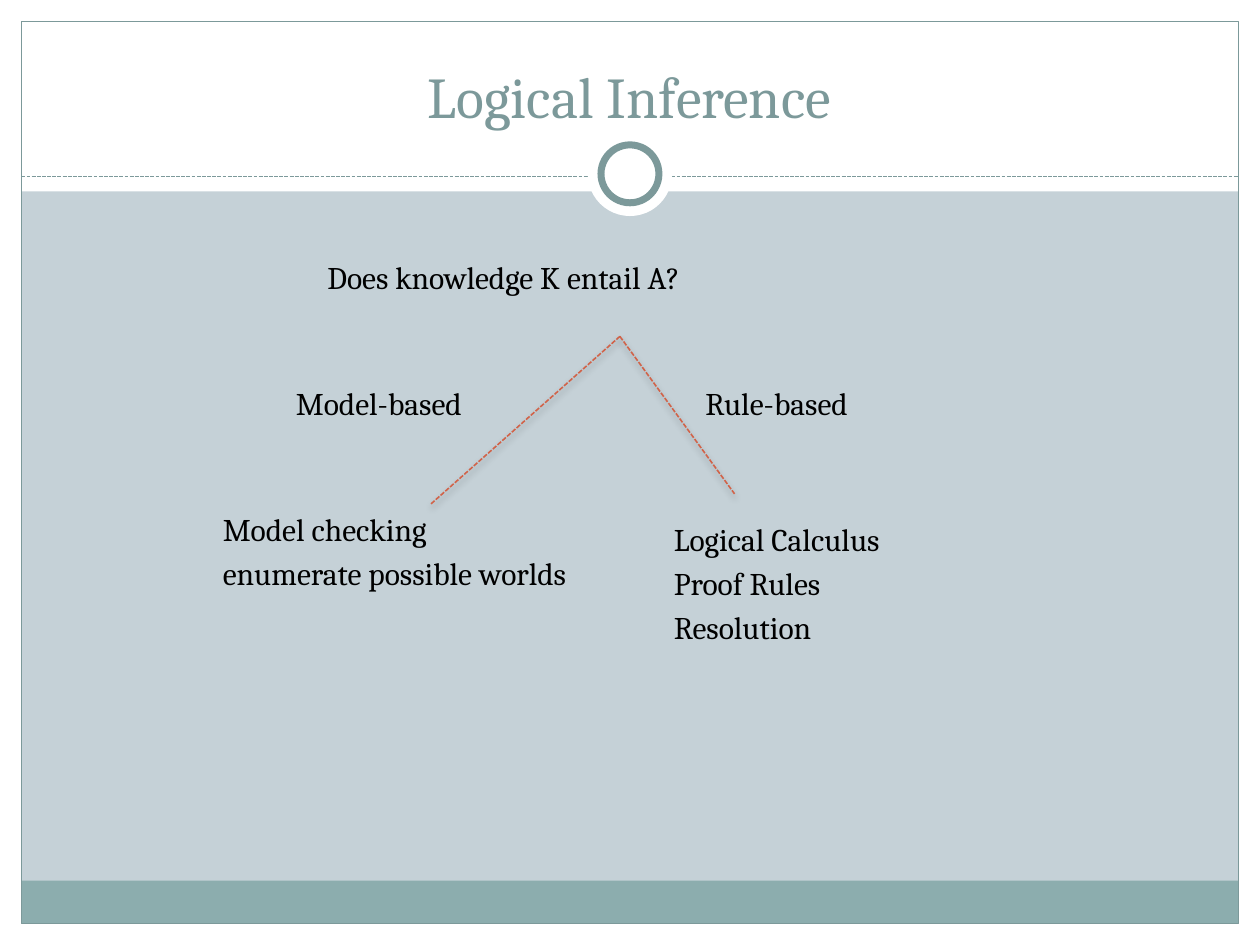
import pptx
import pptx.util
import pptx.dml.color
import pptx.enum.dml
import pptx.enum.shapes
import pptx.enum.text
import pptx.oxml
import pptx.oxml.ns

Inches, Pt = pptx.util.Inches, pptx.util.Pt
RGBColor = pptx.dml.color.RGBColor
SHAPE = pptx.enum.shapes.MSO_SHAPE
ANCHOR = pptx.enum.text.MSO_ANCHOR
ALIGN = pptx.enum.text.PP_ALIGN

# Content
TITLE = "Logical Inference"
NOTES = [  # left, top, width, height, lines
    (2.5, 2, 4.84, 0.67, ["Does knowledge K entail A?"]),
    (2.25, 3, 2.5, 0.75, ["Model-based"]),
    (1.67, 4, 3.5, 0.75, ["Model checking", "enumerate possible worlds"]),
    (5.5, 3, 1.75, 0.75, ["Rule-based"]),
    (5.25, 4.08, 2.33, 1.25, ["Logical Calculus", "Proof Rules", "Resolution"]),
]
BRANCH_TOP = (4.92, 2.67)
BRANCH_ENDS = [(3.42, 4), (5.83, 3.92)]

# Style
FONT = "Cambria"
WHITE = RGBColor(0xFF, 0xFF, 0xFF)
BLACK = RGBColor(0, 0, 0)
BACKGROUND = RGBColor(0xC5, 0xD1, 0xD7)
TEAL = RGBColor(0x7C, 0x99, 0x9A)
FOOTER = RGBColor(0x8C, 0xAD, 0xAE)
ORANGE = RGBColor(0xD1, 0x63, 0x49)
WIDTH, HEIGHT, MARGIN = 10, 7.5, 0.17
HEADER, RULE, FOOTER_HEIGHT = 1.52, 1.4, 0.34
RING_CENTER = (WIDTH / 2, 1.38)
INNER_WIDTH = WIDTH - 2 * MARGIN
NAMESPACE = pptx.oxml.ns.nsdecls("a")
NO_EFFECT = f"<a:effectLst {NAMESPACE}/>"
SOFT_SHADOW = (
    f'<a:effectLst {NAMESPACE}><a:outerShdw blurRad="50800" dist="25400" '
    'dir="5400000" rotWithShape="0"><a:srgbClr val="000000">'
    '<a:alpha val="35000"/></a:srgbClr></a:outerShdw></a:effectLst>'
)

presentation = pptx.Presentation()
presentation.slide_width, presentation.slide_height = Inches(WIDTH), Inches(HEIGHT)
slide = presentation.slides.add_slide(presentation.slide_layouts[6])
slide.background.fill.solid()
slide.background.fill.fore_color.rgb = BACKGROUND


def add_shape(kind, left, top, width, height, fill=None, line=None, weight=0.75):
    shape = slide.shapes.add_shape(kind, *map(Inches, (left, top, width, height)))
    shape.shadow.inherit = False
    if fill is None:
        shape.fill.background()
    else:
        shape.fill.solid()
        shape.fill.fore_color.rgb = fill
    if line is None:
        shape.line.fill.background()
    else:
        shape.line.color.rgb = line
        shape.line.width = Pt(weight)


def add_circle(diameter, **style):
    left, top = (center - diameter / 2 for center in RING_CENTER)
    add_shape(SHAPE.OVAL, left, top, diameter, diameter, WHITE, **style)


def add_dashed_line(start, end, color, weight, effect):
    connector = slide.shapes.add_connector(
        pptx.enum.shapes.MSO_CONNECTOR.STRAIGHT, *map(Inches, start + end))
    connector.line.color.rgb = color
    connector.line.width = Pt(weight)
    # SQUARE_DOT is the sysDot preset, so the short system dash is set below
    connector.line.dash_style = pptx.enum.dml.MSO_LINE.SQUARE_DOT
    dash = connector.line._ln.find(pptx.oxml.ns.qn("a:prstDash"))
    dash.set("val", "sysDash")
    connector._element.spPr.append(pptx.oxml.parse_xml(effect))


def add_text(left, top, width, height, lines, size, color,
             anchor=ANCHOR.TOP, align=ALIGN.LEFT, space=0):
    box = slide.shapes.add_textbox(*map(Inches, (left, top, width, height)))
    frame = box.text_frame
    frame.word_wrap = True
    frame.vertical_anchor = anchor
    for index, text in enumerate(lines):
        paragraph = frame.add_paragraph() if index else frame.paragraphs[0]
        paragraph.alignment = align
        paragraph.space_before = Pt(space)
        run = paragraph.add_run()
        run.text = text
        run.font.name = FONT
        run.font.size = Pt(size)
        run.font.color.rgb = color


# White margins, header band and footer band
for band in [
    (0, HEIGHT - MARGIN, WIDTH, MARGIN),
    (0, 0, WIDTH, HEADER),
    (0, 0, MARGIN, HEIGHT),
    (WIDTH - MARGIN, 0, MARGIN, HEIGHT),
]:
    add_shape(SHAPE.RECTANGLE, *band, fill=WHITE)
add_shape(SHAPE.RECTANGLE, MARGIN, HEIGHT - MARGIN - FOOTER_HEIGHT,
          INNER_WIDTH, FOOTER_HEIGHT, fill=FOOTER)

# Frame, header rule and ring
add_shape(SHAPE.RECTANGLE, MARGIN, MARGIN, INNER_WIDTH, HEIGHT - 2 * MARGIN, line=TEAL)
add_dashed_line((MARGIN, RULE), (WIDTH - MARGIN, RULE), TEAL, 0.75, NO_EFFECT)
add_circle(0.67)
add_circle(0.46, line=TEAL, weight=4)

# Title and tree labels
add_text(0.33, 0.25, 9.33, 0.83, [TITLE], 33, TEAL, ANCHOR.BOTTOM, ALIGN.CENTER)
for *place, lines in NOTES:
    add_text(*place, lines, 18, BLACK, space=3.6)

# Branches
for end in BRANCH_ENDS:
    add_dashed_line(BRANCH_TOP, end, ORANGE, 0.9, SOFT_SHADOW)

presentation.save("out.pptx")
